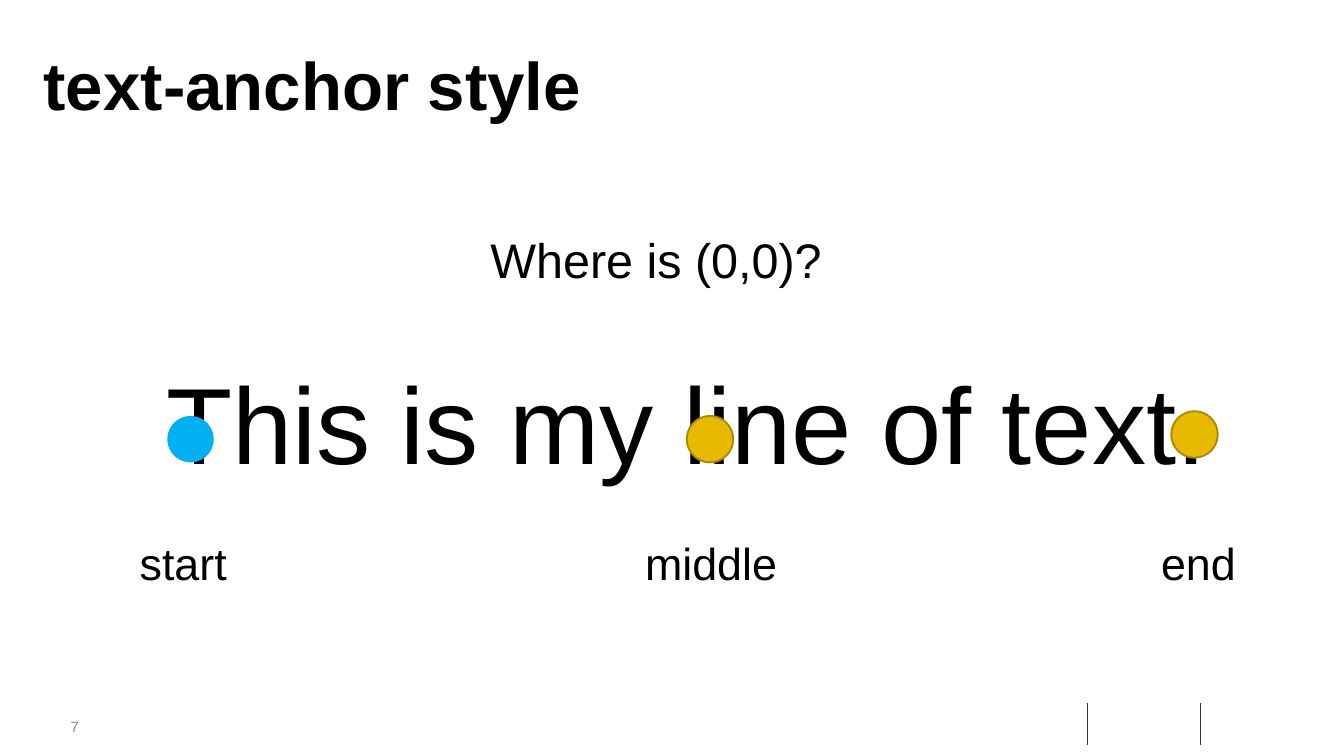
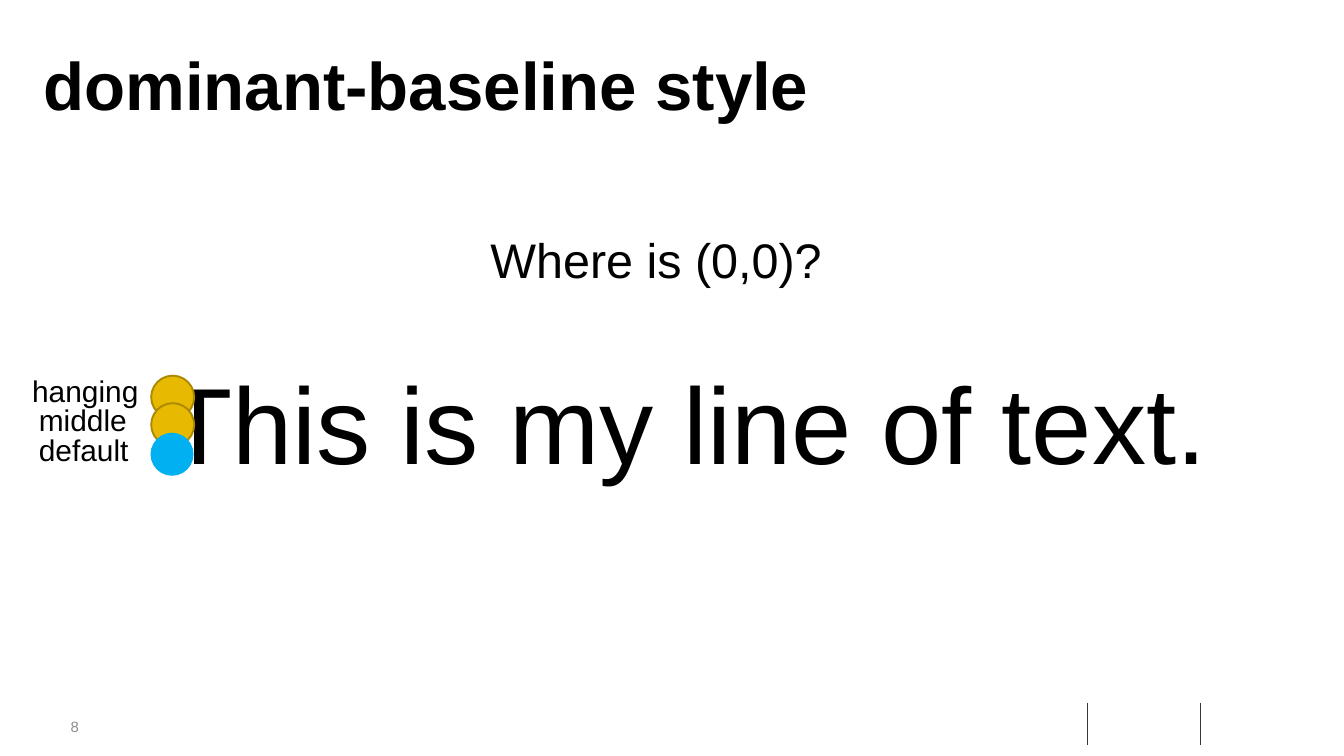
from pptx import Presentation
from pptx.dml.color import RGBColor
from pptx.enum import shapes, text
from pptx.oxml.ns import qn
from pptx.util import Inches, Pt
from lxml import etree

FONT = "Arial"
BLACK, GREY, RULE = "000000", "8C8C8C", "383838"
BLUE, GOLD, EDGE = "00B0F0", "E7B900", "AB8900"

# Wording shared by both slides: text, size, box
SHARED = [
    ("Where is (0,0)?", 52, (7.2, 3.38, 5.19, 0.98)),
    ("This is my line of text.", 116, (2.38, 5.25, 15.84, 2.05)),
]
RULES = (16.18, 17.86)

# Dots: left, top, fill; labels: text, box
SLIDES = [
    dict(title="text-anchor style", page=7, dot=0.69, size=48,
         dots=[(2.49, 6.19, BLUE), (10.22, 6.19, GOLD), (17.43, 6.12, GOLD)],
         labels=[("start", (1.98, 7.93, 1.51, 0.91)),
                 ("end", (17.18, 7.93, 1.33, 0.91)),
                 ("middle", (9.5, 7.93, 2.19, 0.91))]),
    dict(title="dominant-baseline style", page=8, dot=0.64, size=32,
         dots=[(2.25, 5.59, GOLD), (2.25, 6, GOLD), (2.24, 6.44, BLUE)],
         labels=[("hanging", (0.38, 5.49, 1.8, 0.64)),
                 ("default", (0.48, 6.38, 1.55, 0.64)),
                 ("middle", (0.48, 5.93, 1.52, 0.64))]),
]


def rgb(code):
    return RGBColor.from_string(code)


def write(slide, words, size, box, color=BLACK, bold=False, wrap=False):
    frame = slide.shapes.add_textbox(*map(Inches, box)).text_frame
    frame.word_wrap = wrap
    para = frame.paragraphs[0]
    para.text = words
    font = para.font
    font.name, font.size, font.bold = FONT, Pt(size), bold
    font.color.rgb = rgb(color)
    return frame


def rule(slide, x):
    line = slide.shapes.add_connector(
        shapes.MSO_CONNECTOR.STRAIGHT,
        Inches(x), Inches(10.46), Inches(x), Inches(11.09))
    line.line.color.rgb = rgb(RULE)
    line.line.width = Pt(1)
    etree.SubElement(line._element.spPr, qn("a:effectLst"))


def dot(slide, x, y, side, color):
    oval = slide.shapes.add_shape(
        shapes.MSO_SHAPE.OVAL, *map(Inches, (x, y, side, side)))
    oval.shadow.inherit = False
    oval.fill.solid()
    oval.fill.fore_color.rgb = rgb(color)
    if color == GOLD:
        oval.line.color.rgb = rgb(EDGE)
        oval.line.width = Pt(2)
    else:
        oval.line.fill.background()


def base(slide, title, page):
    # Footer rules and page number
    for x in RULES:
        rule(slide, x)
    foot = write(slide, str(page), 16, (1.05, 10.68, 0.59, 0.27), GREY, wrap=True)
    foot.margin_left = foot.margin_right = foot.margin_top = foot.margin_bottom = 0
    foot.vertical_anchor = text.MSO_ANCHOR.MIDDLE
    # Title and common wording
    write(slide, title, 72, (0.55, 0.6, 17.9, 2.17), bold=True, wrap=True)
    for words, size, box in SHARED:
        write(slide, words, size, box)


def main():
    deck = Presentation()
    deck.slide_width, deck.slide_height = Inches(20), Inches(11.25)
    for data in SLIDES:
        slide = deck.slides.add_slide(deck.slide_layouts[6])
        base(slide, data["title"], data["page"])
        for x, y, color in data["dots"]:
            dot(slide, x, y, data["dot"], color)
        for words, box in data["labels"]:
            write(slide, words, data["size"], box)
    deck.save("out.pptx")


if __name__ == "__main__":
    main()
